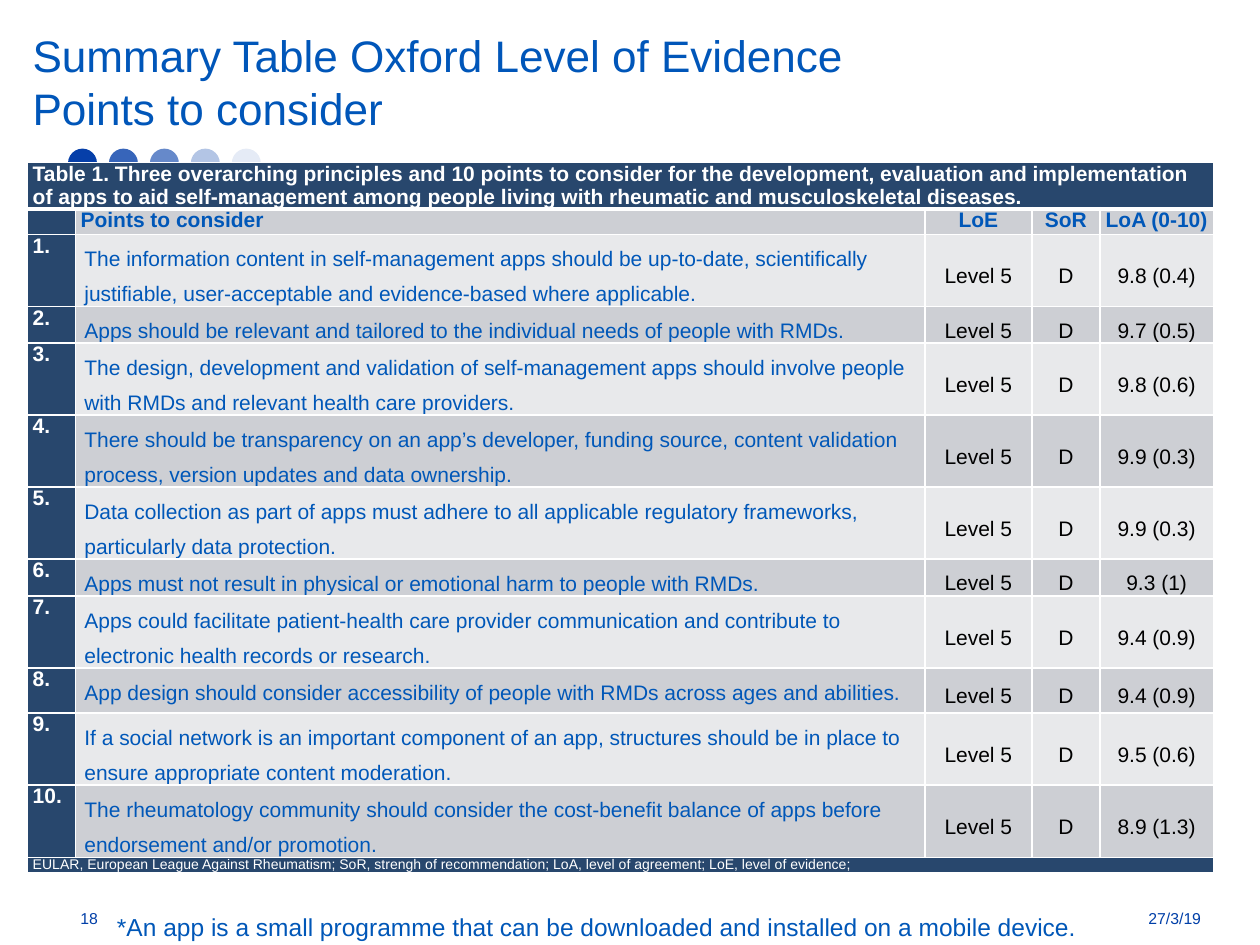
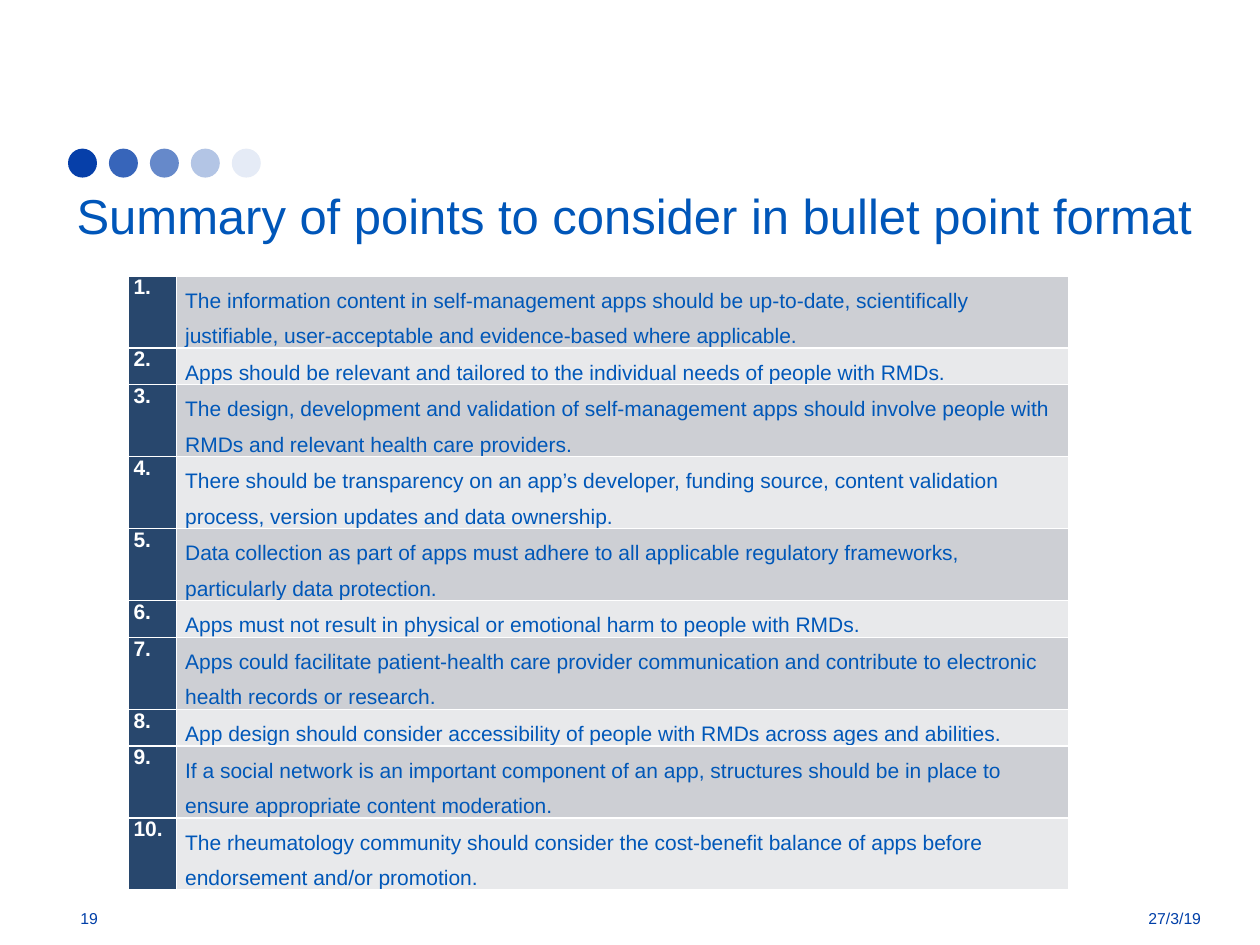
import dataclasses

import lxml.etree
import pptx
import pptx.dml.color
import pptx.enum.shapes
import pptx.enum.text
import pptx.oxml.ns
import pptx.util

Inches = pptx.util.Inches
Pt = pptx.util.Pt
ALIGN = pptx.enum.text.PP_ALIGN
ANCHOR = pptx.enum.text.MSO_ANCHOR
qn = pptx.oxml.ns.qn


@dataclasses.dataclass(frozen=True)
class Theme:
    font: str = "Arial"
    title: str = "0056B9"
    text: str = "0057B8"
    footer: str = "003FA8"
    dot: str = "063FA9"
    navy: str = "28476D"
    dark_band: str = "CDCFD4"
    light_band: str = "E8E9EB"
    white: str = "FFFFFF"
    black: str = "000000"
    two_line_title_size: float = 25.2
    title_size: float = 28
    footnote_size: float = 14
    table_size: float = 12
    footer_size: float = 9
    key_size: float = 8
    label_leading: float = 1.1
    point_leading: float = 20.2


@dataclasses.dataclass(frozen=True)
class Box:
    left: float
    top: float
    width: float
    height: float

    def emu(self):
        return [Inches(v) for v in (self.left, self.top, self.width, self.height)]


THEME = Theme()
DATE = "27/3/19"
DOT_OPACITIES = (100, 80, 61, 30, 10)
ONE_LINE, TWO_LINES, ROOMY_LINE = 0.29, 0.57, 0.36
NUMBER_WIDTH = 0.38

POINTS = [
    ("The information content in self-management apps should be up-to-date, scientifically "
     "justifiable, user-acceptable and evidence-based where applicable.", "9.8 (0.4)", TWO_LINES),
    ("Apps should be relevant and tailored to the individual needs of people with RMDs.",
     "9.7 (0.5)", ONE_LINE),
    ("The design, development and validation of self-management apps should involve people "
     "with RMDs and relevant health care providers.", "9.8 (0.6)", TWO_LINES),
    ("There should be transparency on an app’s developer, funding source, content validation "
     "process, version updates and data ownership.", "9.9 (0.3)", TWO_LINES),
    ("Data collection as part of apps must adhere to all applicable regulatory frameworks, "
     "particularly data protection.", "9.9 (0.3)", TWO_LINES),
    ("Apps must not result in physical or emotional harm to people with RMDs.",
     "9.3 (1)", ONE_LINE),
    ("Apps could facilitate patient-health care provider communication and contribute to "
     "electronic health records or research.", "9.4 (0.9)", TWO_LINES),
    ("App design should consider accessibility of people with RMDs across ages and abilities.",
     "9.4 (0.9)", ONE_LINE),
    ("If a social network is an important component of an app, structures should be in place "
     "to ensure appropriate content moderation.", "9.5 (0.6)", TWO_LINES),
    ("The rheumatology community should consider the cost-benefit balance of apps before "
     "endorsement and/or promotion.", "8.9 (1.3)", TWO_LINES),
]
CAPTION = ("Table 1. Three overarching principles and 10 points to consider for the development, "
           "evaluation and implementation of apps to aid self-management among people living with "
           "rheumatic and musculoskeletal diseases.")
HEADINGS = ["", "Points to consider", "LoE", "SoR", "LoA (0-10)"]
KEY = ("EULAR, European League Against Rheumatism; SoR, strengh of recommendation; "
       "LoA, level of agreement; LoE, level of evidence;")
FOOTNOTE = "*An app is a small programme that can be downloaded and installed on a mobile device."


def rgb(value):
    return pptx.dml.color.RGBColor.from_string(value)


def apply(target, values):
    for name, value in values.items():
        setattr(target, name, value)


def write(frame, text, color, size, bold=False, **paragraph_format):
    paragraph = frame.paragraphs[0]
    paragraph.text = text
    apply(paragraph, paragraph_format)
    for run in paragraph.runs:
        apply(run.font, {"name": THEME.font, "size": Pt(size), "bold": bold})
        run.font.color.rgb = rgb(color)
    if not text:
        lxml.etree.SubElement(paragraph._p, qn("a:endParaRPr"), sz=str(int(size * 100)))


def add_text(slide, box, text, color, size, anchor=ANCHOR.TOP, **paragraph_format):
    frame = slide.shapes.add_textbox(*box.emu()).text_frame
    apply(frame, {"word_wrap": True, "vertical_anchor": anchor})
    write(frame, text, color, size, **paragraph_format)


def add_dots(slide, box):
    pitch = (box.width - box.height) / (len(DOT_OPACITIES) - 1)
    for index, opacity in enumerate(DOT_OPACITIES):
        place = Box(box.left + index * pitch, box.top, box.height, box.height)
        dot = slide.shapes.add_shape(pptx.enum.shapes.MSO_SHAPE.OVAL, *place.emu())
        dot.shadow.inherit = False
        dot.line.fill.background()
        dot.fill.solid()
        dot.fill.fore_color.rgb = rgb(THEME.dot)
        if opacity < 100:
            color = dot._element.spPr.find(".//" + qn("a:srgbClr"))
            lxml.etree.SubElement(color, qn("a:alpha"), val=str(opacity * 1000))


def add_footer(slide, box, number):
    look = {"color": THEME.footer, "size": THEME.footer_size, "anchor": ANCHOR.MIDDLE}
    date_width = 1.34
    add_text(slide, Box(box.left, box.top, 0.96, box.height), number, **look)
    add_text(slide, Box(box.left + box.width - date_width, box.top, date_width, box.height),
             DATE, alignment=ALIGN.RIGHT, **look)


def start_slide(deck, title, title_box, title_size, number):
    slide = deck.slides.add_slide(deck.slide_layouts[6])
    add_dots(slide, Box(0.54, 1.18, 1.53, 0.23))
    add_text(slide, title_box, title, THEME.title, title_size)
    add_footer(slide, Box(0.54, 7.09, 9.09, 0.4), number)
    return slide


def style_cell(cell, fill, insets, bottom=1, anchor=ANCHOR.TOP):
    sides = ("margin_left", "margin_top", "margin_right", "margin_bottom")
    apply(cell, {side: Inches(inset) for side, inset in zip(sides, insets)})
    cell.vertical_anchor = anchor
    properties = cell._tc.get_or_add_tcPr()
    for edge, width in {"lnL": 1, "lnR": 1, "lnT": 1, "lnB": bottom}.items():
        line = lxml.etree.SubElement(properties, qn("a:" + edge), w=str(Pt(width)))
        solid = lxml.etree.SubElement(line, qn("a:solidFill"))
        lxml.etree.SubElement(solid, qn("a:srgbClr"), val=THEME.white)
    cell.fill.solid()
    cell.fill.fore_color.rgb = rgb(fill)


def fill_label(cell, text, fill=THEME.navy, color=THEME.white, size=THEME.table_size,
               bold=True, bottom=1, alignment=ALIGN.LEFT):
    style_cell(cell, fill, (0.04, 0, 0.04, 0), bottom)
    write(cell.text_frame, text, color, size, bold, alignment=alignment,
          line_spacing=Pt(size * THEME.label_leading))


def fill_point(cells, number, statement, scores, fill):
    leading = Pt(THEME.point_leading)
    fill_label(cells[0], f"{number}.")
    style_cell(cells[1], fill, (0.07, 0.01, 0.07, 0))
    write(cells[1].text_frame, statement, THEME.text, THEME.table_size, line_spacing=leading)
    for cell, score in zip(cells[2:], scores):
        style_cell(cell, fill, (0, 0, 0, 0), anchor=ANCHOR.MIDDLE)
        write(cell.text_frame, score, THEME.black, THEME.table_size,
              alignment=ALIGN.CENTER, line_spacing=leading)


def fill_banner(cells, text, **look):
    cells[0].merge(cells[-1])
    for index, cell in enumerate(cells):
        fill_label(cell, text if index == 0 else "", **look)


def add_grid(slide, box, widths, heights):
    table = slide.shapes.add_table(len(heights), len(widths), *box.emu()).table
    apply(table, {"first_row": False, "horz_banding": False})
    for column, width in zip(table.columns, widths):
        column.width = Inches(width)
    for row, height in zip(table.rows, heights):
        row.height = Inches(height)
    return [[table.cell(r, c) for c in range(len(widths))] for r in range(len(heights))]


def add_evidence_table(slide, box):
    score_widths = [0.85, 0.54, 0.9]
    widths = [NUMBER_WIDTH, box.width - NUMBER_WIDTH - sum(score_widths), *score_widths]
    heights = [height for _, _, height in POINTS]
    heights[7] = ROOMY_LINE
    caption, header, *points, key = add_grid(slide, box, widths, [0.37, 0.19, *heights, 0.12])
    fill_banner(caption, CAPTION, bottom=3)
    for index, (cell, heading) in enumerate(zip(header, HEADINGS)):
        fill_label(cell, heading, THEME.dark_band if heading else THEME.navy, THEME.text,
                   alignment=ALIGN.CENTER if index > 1 else ALIGN.LEFT)
    for number, (cells, (statement, agreement, _)) in enumerate(zip(points, POINTS), 1):
        band = THEME.light_band if number % 2 else THEME.dark_band
        fill_point(cells, number, statement, ["Level 5", "D", agreement], band)
    fill_banner(key, KEY, size=THEME.key_size, bold=False)


def add_points_table(slide, box):
    rows = add_grid(slide, box, [NUMBER_WIDTH, box.width - NUMBER_WIDTH],
                    [height for _, _, height in POINTS])
    for number, (cells, (statement, _, _)) in enumerate(zip(rows, POINTS), 1):
        band = THEME.dark_band if number % 2 else THEME.light_band
        fill_point(cells, number, statement, [], band)


def build_evidence_slide(deck):
    slide = start_slide(deck, "Summary Table Oxford Level of Evidence\vPoints to consider",
                        Box(0.16, 0.18, 9.11, 0.69), THEME.two_line_title_size, "18")
    add_evidence_table(slide, Box(0.22, 1.29, 9.41, 5.61))
    add_text(slide, Box(0.83, 7.07, 8.8, 0.41), FOOTNOTE, THEME.text, THEME.footnote_size,
             alignment=ALIGN.JUSTIFY, line_spacing=1.5)


def build_points_slide(deck):
    slide = start_slide(deck, "Summary of points to consider in bullet point format",
                        Box(0.51, 1.42, 9.11, 0.69), THEME.title_size, "19")
    add_points_table(slide, Box(1.02, 2.19, 7.46, 4.86))


def main():
    deck = pptx.Presentation()
    apply(deck, {"slide_width": Inches(10), "slide_height": Inches(7.5)})
    build_evidence_slide(deck)
    build_points_slide(deck)
    deck.save("out.pptx")


if __name__ == "__main__":
    main()
